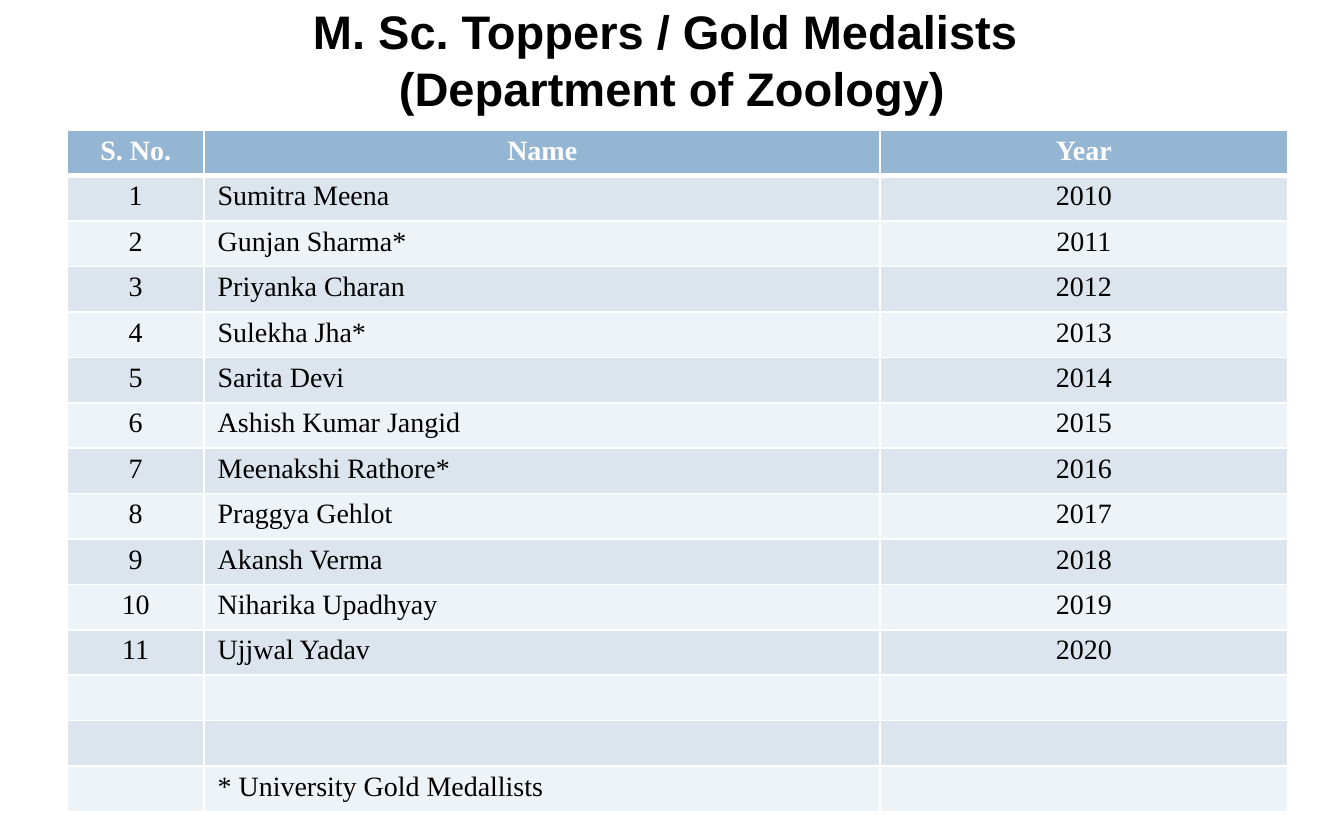
"""Build the slide listing the M. Sc. toppers of the Department of Zoology."""
import pptx
import pptx.dml.color
import pptx.enum.text
import pptx.oxml.ns
import pptx.util
from lxml import etree

Inches, Pt = pptx.util.Inches, pptx.util.Pt
RGB = pptx.dml.color.RGBColor.from_string
ALIGN = pptx.enum.text.PP_ALIGN
ANCHOR = pptx.enum.text.MSO_ANCHOR
qn = pptx.oxml.ns.qn

THEME = {
    "title_font": "Arial", "title_size": 25.2,
    "body_font": "Times New Roman", "body_size": 15,
    "ink": "000000", "white": "FFFFFF", "header": "94B6D2",
    "bands": ["DCE5EE", "EEF3F7"],
}


def write(tf, text, font, size, color, bold=False, align=ALIGN.LEFT):
    """Fill the first paragraph of a text frame in one format."""
    p = tf.paragraphs[0]
    p.text = text
    p.alignment = align
    for r in p.runs:
        r.font.name = font
        r.font.size = Pt(size)
        r.font.bold = bold
        r.font.color.rgb = RGB(color)
    if not text:
        etree.SubElement(p._p, qn("a:endParaRPr"), sz=str(int(size * 100)))


def border(cell, bottom):
    """Draw white cell borders with the given bottom width in points."""
    tcPr = cell._tc.get_or_add_tcPr()
    widths = {"lnL": 1, "lnR": 1, "lnT": 1, "lnB": bottom}
    for i, (tag, width) in enumerate(widths.items()):
        ln = etree.Element(qn(f"a:{tag}"), w=str(Pt(width)))
        fill = etree.SubElement(ln, qn("a:solidFill"))
        etree.SubElement(fill, qn("a:srgbClr"), val=THEME["white"])
        tcPr.insert(i, ln)


prs = pptx.Presentation()
prs.slide_width, prs.slide_height = Inches(10), Inches(6.25)
s = prs.slides.add_slide(prs.slide_layouts[6])

sp = s.shapes.add_textbox(0, 0, Inches(10), Inches(0.88))
tf = sp.text_frame
tf.word_wrap = True
tf.vertical_anchor = ANCHOR.MIDDLE
write(tf, "M. Sc. Toppers / Gold Medalists \v(Department of Zoology)",
      font=THEME["title_font"], size=THEME["title_size"],
      color=THEME["ink"], bold=True, align=ALIGN.CENTER)

names = [
    "Sumitra Meena", "Gunjan Sharma*", "Priyanka Charan", "Sulekha Jha*",
    "Sarita Devi", "Ashish Kumar Jangid", "Meenakshi Rathore*",
    "Praggya Gehlot", "Akansh Verma", "Niharika Upadhyay", "Ujjwal Yadav",
]
rows = [("S. No.", "Name", "Year")]
rows += [(str(i), name, str(2009 + i)) for i, name in enumerate(names, 1)]
rows += [("", "", ""), ("", "", ""), ("", "* University Gold Medallists", "")]

height = Inches(5.07)
table = s.shapes.add_table(len(rows), 3, Inches(0.5), Inches(0.97),
                           Inches(9.08), height).table
for column, width in zip(table.columns, (1.02, 5.03, 3.03)):
    column.width = Inches(width)

for i, row in enumerate(rows):
    table.rows[i].height = height // len(rows)
    head = i == 0
    for j, text in enumerate(row):
        cell = table.cell(i, j)
        cell.margin_left = cell.margin_right = Inches(0.1)
        cell.margin_top = cell.margin_bottom = Inches(0.04)
        cell.fill.solid()
        cell.fill.fore_color.rgb = RGB(
            THEME["header"] if head else THEME["bands"][(i - 1) % 2])
        border(cell, bottom=3 if head else 1)
        write(cell.text_frame, text,
              font=THEME["body_font"], size=THEME["body_size"],
              color=THEME["white" if head else "ink"], bold=head,
              align=ALIGN.CENTER if head or j != 1 else ALIGN.LEFT)

prs.save("out.pptx")
